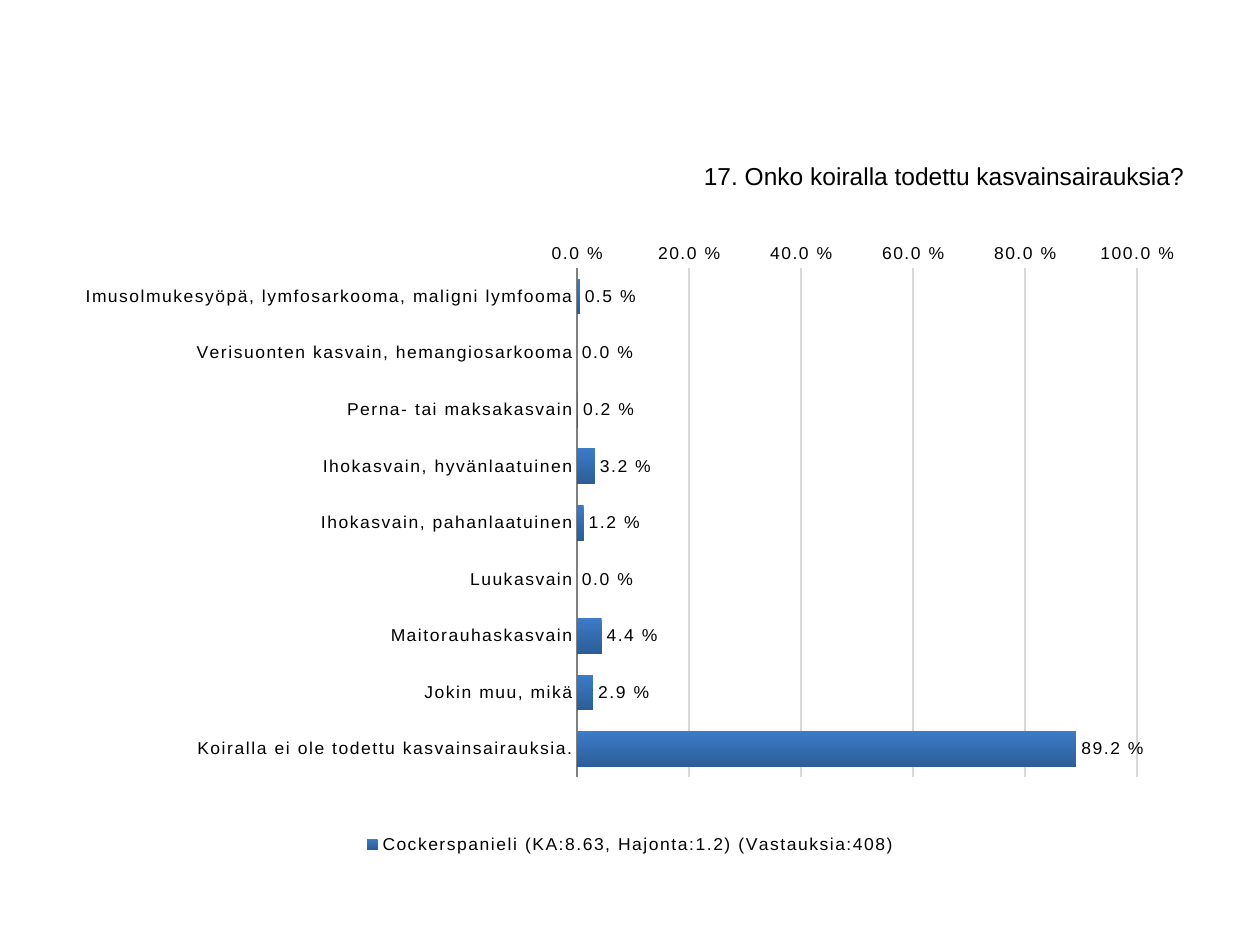
from lxml import etree
from pptx import Presentation
from pptx.chart.data import CategoryChartData
from pptx.dml.color import RGBColor
from pptx.enum.chart import (XL_AXIS_CROSSES, XL_CHART_TYPE, XL_LABEL_POSITION,
                             XL_LEGEND_POSITION, XL_TICK_MARK)
from pptx.enum.text import PP_ALIGN
from pptx.oxml.ns import qn
from pptx.util import Emu, Pt

PX = 914400 // 126
BLACK = RGBColor(0x00, 0x00, 0x00)
BAR_TOP = RGBColor(0x3C, 0x7B, 0xC7)
BAR_BOTTOM = RGBColor(0x2C, 0x5D, 0x98)
GRID = RGBColor(0xD9, 0xD9, 0xD9)
AXIS = RGBColor(0x80, 0x80, 0x80)
BAR_CLUSTERED = XL_CHART_TYPE.BAR_CLUSTERED
BOTTOM = XL_LEGEND_POSITION.BOTTOM
OUTSIDE_END = XL_LABEL_POSITION.OUTSIDE_END
MAXIMUM = XL_AXIS_CROSSES.MAXIMUM
NO_TICK = XL_TICK_MARK.NONE
RIGHT = PP_ALIGN.RIGHT

FONT = "Arial"
PERCENT = "0.0\\ %"
LETTER_SPACING = "100"
QUESTION = "17. Onko koiralla todettu kasvainsairauksia?"
BREED = "Cockerspanieli (KA:8.63, Hajonta:1.2) (Vastauksia:408)"
ANSWERS = {
    "Imusolmukesyöpä, lymfosarkooma, maligni lymfooma": 0.005,
    "Verisuonten kasvain, hemangiosarkooma": 0,
    "Perna- tai maksakasvain": 0.002,
    "Ihokasvain, hyvänlaatuinen": 0.032,
    "Ihokasvain, pahanlaatuinen": 0.012,
    "Luukasvain": 0,
    "Maitorauhaskasvain": 0.044,
    "Jokin muu, mikä": 0.029,
    "Koiralla ei ole todettu kasvainsairauksia.": 0.892,
}


def px(*lengths):
    return [Emu(length * PX) for length in lengths]


def style_font(font, size):
    font.name = FONT
    font.size = Pt(size)
    font.bold = False
    font.color.rgb = BLACK


def add_question(slide, left, top, width, height):
    frame = slide.shapes.add_textbox(*px(left, top, width, height)).text_frame
    frame.word_wrap = True
    question = frame.paragraphs[0]
    question.text = QUESTION
    question.alignment = RIGHT
    question.space_before = Pt(3)
    style_font(question.font, 14)


def place_plot(chart, **fractions):
    plot_area = chart._chartSpace.chart.plotArea
    for old_layout in plot_area.findall(qn("c:layout")):
        plot_area.remove(old_layout)
    layout = etree.Element(qn("c:layout"))
    manual = etree.SubElement(layout, qn("c:manualLayout"))
    settings = {"layoutTarget": "inner", "xMode": "edge", "yMode": "edge"}
    for tag, value in {**settings, **fractions}.items():
        etree.SubElement(manual, qn(f"c:{tag}")).set("val", str(value))
    plot_area.insert(0, layout)


def style_axes(chart):
    answers, shares = chart.category_axis, chart.value_axis
    for axis in (answers, shares):
        axis.major_tick_mark = NO_TICK
        axis.minor_tick_mark = NO_TICK
        style_font(axis.tick_labels.font, 10)
    answers.reverse_order = True
    answers.crosses = MAXIMUM
    answers.format.line.color.rgb = AXIS
    answers.format.line.width = Pt(0.75)
    shares.minimum_scale = 0
    shares.maximum_scale = 1
    shares.major_unit = 0.2
    shares.tick_labels.number_format = PERCENT
    shares.tick_labels.number_format_is_linked = False
    shares.format.line.fill.background()
    shares.major_gridlines.format.line.color.rgb = GRID
    shares.major_gridlines.format.line.width = Pt(0.75)


def style_bars(plot):
    plot.gap_width = 58
    plot.vary_by_categories = False
    bars = plot.series[0]
    bars.invert_if_negative = False
    fill = bars.format.fill
    fill.gradient()
    fill.gradient_angle = 270
    for stop, color in zip(fill.gradient_stops, (BAR_TOP, BAR_BOTTOM)):
        stop.color.rgb = color
    labels = bars.data_labels
    labels.show_value = True
    labels.position = OUTSIDE_END
    labels.number_format = PERCENT
    labels.number_format_is_linked = False
    style_font(labels.font, 10)


def add_answer_chart(slide, left, top, width, height):
    data = CategoryChartData(number_format=PERCENT)
    data.categories = list(ANSWERS)
    data.add_series(BREED, list(ANSWERS.values()))
    chart = slide.shapes.add_chart(
        BAR_CLUSTERED, *px(left, top, width, height), data).chart
    chart.has_title = False
    style_font(chart.font, 10)
    chart.has_legend = True
    chart.legend.position = BOTTOM
    chart.legend.include_in_layout = False
    style_font(chart.legend.font, 10)
    style_axes(chart)
    style_bars(chart.plots[0])
    place_plot(chart, x=round(514 / width, 4), y=round(13 / height, 4),
               w=round(560 / width, 4), h=round(519 / height, 4))
    for text_style in chart._chartSpace.iter(qn("a:defRPr")):
        text_style.set("spc", LETTER_SPACING)


def main():
    presentation = Presentation()
    presentation.slide_width, presentation.slide_height = px(1260, 945)
    slide = presentation.slides.add_slide(presentation.slide_layouts[6])
    add_question(slide, 63, 155, 1134, 74)
    add_answer_chart(slide, 63, 244, 1134, 615)
    presentation.save("out.pptx")


if __name__ == "__main__":
    main()
